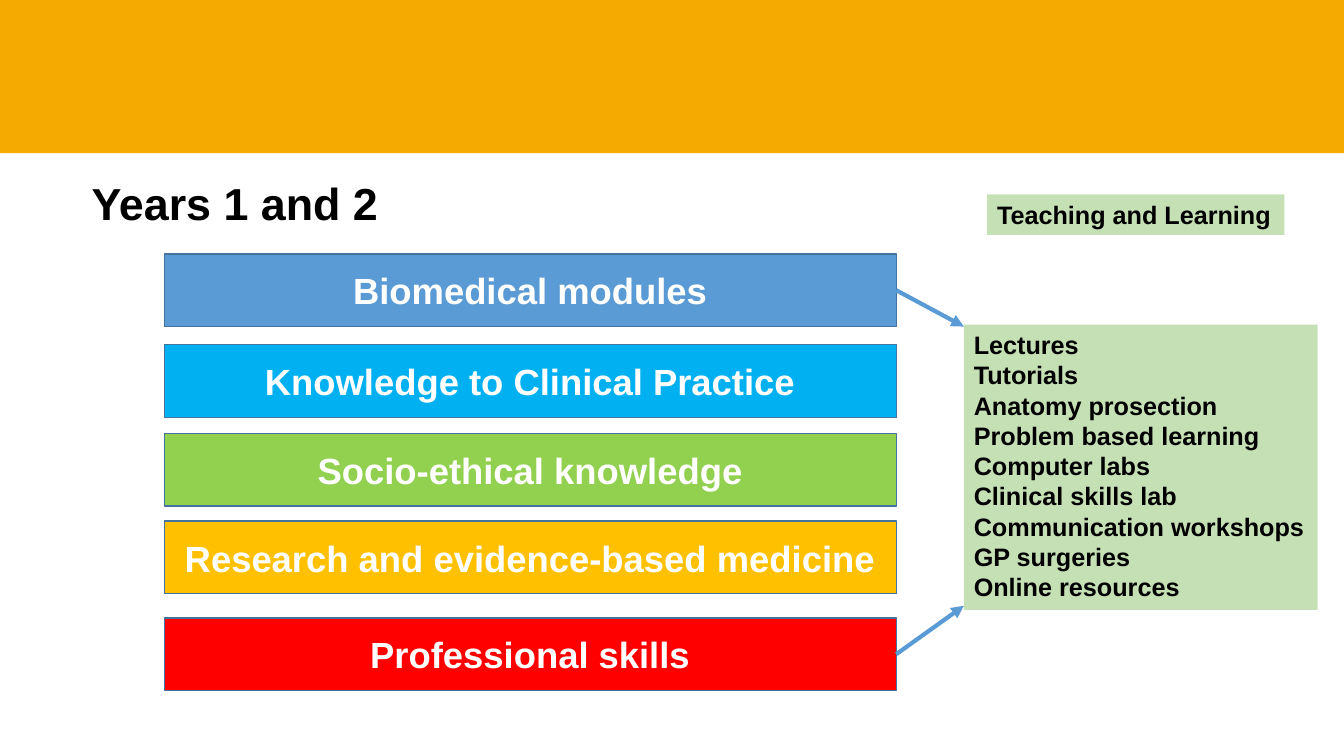
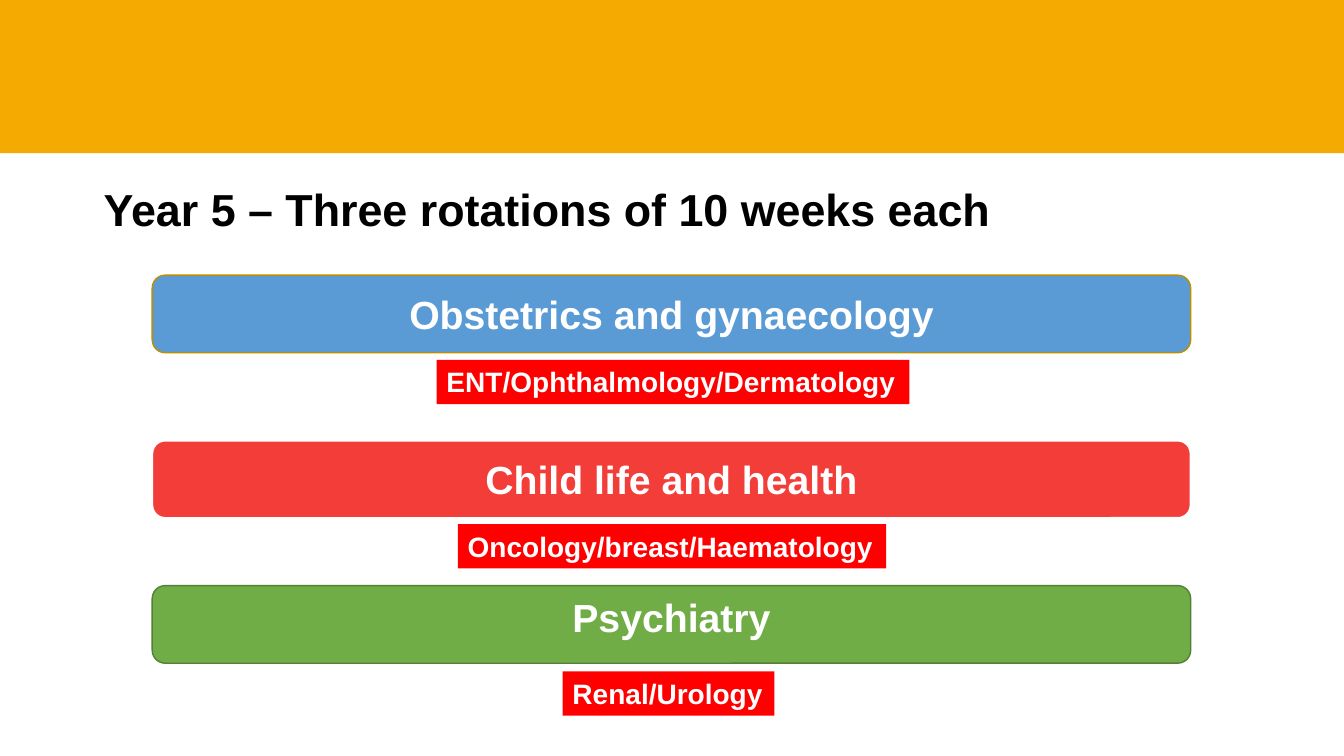
"""Build two slides on the modules and rotations of a medical degree."""
from lxml.etree import SubElement
from pptx import Presentation
from pptx.dml.color import RGBColor
from pptx.enum.shapes import MSO_CONNECTOR, MSO_SHAPE
from pptx.enum.text import MSO_ANCHOR, MSO_AUTO_SIZE, PP_ALIGN
from pptx.oxml.ns import qn
from pptx.util import Inches, Pt

FONT = "Arial"
ORANGE, BLUE, RED = "F4AA00", "5B9BD5", "FF0000"
PALE_GREEN, WHITE, BLACK = "C5E0B4", "FFFFFF", "000000"
MODULE_LINE = "43739E"

MODULES = [
    ("Biomedical modules", 2.52, BLUE),
    ("Knowledge to Clinical Practice", 3.42, "00B0F0"),
    ("Socio-ethical knowledge", 4.3, "92D050"),
    ("Research and evidence-based medicine", 5.17, "FFC000"),
    ("Professional skills", 6.13, RED),
]
TEACHING = [
    "Lectures", "Tutorials", "Anatomy prosection", "Problem based learning",
    "Computer labs", "Clinical skills lab", "Communication workshops",
    "GP surgeries", "Online resources",
]
ROTATIONS = [
    ("Obstetrics and gynaecology", 2.73, BLUE, "BD8E00", 1),
    ("Child life and health", 4.37, "F23D38", WHITE, 1.5),
    ("Psychiatry", 5.81, "70AD47", "538035", 1),
]
SPECIALTIES = [
    ("ENT/Ophthalmology/Dermatology", 4.33, 3.57, 4.69),
    ("Oncology/breast/Haematology", 4.54, 5.2, 4.25),
    ("Renal/Urology", 5.58, 6.66, 2.1),
]


def rgb(value):
    """Turn a hex string into a colour."""
    return RGBColor.from_string(value)


def fill_with(sp, color):
    """Give a shape a solid fill."""
    sp.fill.solid()
    sp.fill.fore_color.rgb = rgb(color)


def write(tf, lines, size, color, align=PP_ALIGN.LEFT):
    """Write bold lines, one paragraph each."""
    for i, line in enumerate(lines):
        p = tf.paragraphs[0] if i == 0 else tf.add_paragraph()
        p.text = line
        p.alignment = align
        p.font.name = FONT
        p.font.size = Pt(size)
        p.font.bold = True
        p.font.color.rgb = rgb(color)


def add_bar(s, kind, box, fill, line=None, width=1):
    """Add a filled shape, outlined if a line colour is given."""
    sp = s.shapes.add_shape(kind, *map(Inches, box))
    sp.shadow.inherit = False
    fill_with(sp, fill)
    if line:
        sp.line.color.rgb = rgb(line)
        sp.line.width = Pt(width)
    else:
        sp.line.fill.background()
    return sp


def add_text_bar(s, kind, box, text, size, fill, line, width=1):
    """Add a bar with white text in its middle."""
    sp = add_bar(s, kind, box, fill, line, width)
    sp.text_frame.word_wrap = True
    sp.text_frame.vertical_anchor = MSO_ANCHOR.MIDDLE
    write(sp.text_frame, [text], size, WHITE, PP_ALIGN.CENTER)
    return sp


def add_label(s, box, lines, size, color, fill=None, wrap=False):
    """Add a text box that fits its text, filled if a colour is given."""
    sp = s.shapes.add_textbox(*map(Inches, box))
    if fill:
        fill_with(sp, fill)
    sp.text_frame.word_wrap = wrap
    sp.text_frame.auto_size = MSO_AUTO_SIZE.SHAPE_TO_FIT_TEXT
    write(sp.text_frame, lines, size, color)


def add_arrow(s, source, x, y):
    """Add an arrow from the right side of a bar to a point."""
    line = s.shapes.add_connector(MSO_CONNECTOR.STRAIGHT, 0, 0, Inches(x), Inches(y))
    line.begin_connect(source, 3)
    line.line.color.rgb = rgb(BLUE)
    line.line.width = Pt(3)
    SubElement(line._element.spPr.find(qn("a:ln")), qn("a:tailEnd"), type="triangle")
    SubElement(line._element.spPr, qn("a:effectLst"))


def add_slide(prs, title, box, wrap=False):
    """Add a blank slide with the top band and a title."""
    s = prs.slides.add_slide(prs.slide_layouts[6])
    add_bar(s, MSO_SHAPE.RECTANGLE, (0, 0, 13.33, 1.52), ORANGE)
    add_label(s, box, [title], 32, BLACK, wrap=wrap)
    return s


def add_modules_slide(prs):
    """Show the modules of the first two years and how they are taught."""
    s = add_slide(prs, "Years 1 and 2", (0.81, 1.69, 3.07, 0.64))
    bars = [
        add_text_bar(s, MSO_SHAPE.RECTANGLE, (1.63, top, 7.26, 0.72),
                     text, 26, fill, MODULE_LINE)
        for text, top, fill in MODULES
    ]
    add_label(s, (9.56, 3.22, 3.51, 2.83), TEACHING, 18, BLACK, PALE_GREEN)
    add_arrow(s, bars[0], 9.56, 3.24)
    add_arrow(s, bars[-1], 9.56, 6.01)
    add_label(s, (9.79, 1.93, 2.95, 0.4), ["Teaching and Learning"], 18, BLACK, PALE_GREEN)


def add_rotations_slide(prs):
    """Show the three rotations of year 5 with their specialties."""
    s = add_slide(prs, "Year 5 – Three rotations of 10 weeks each",
                  (0.93, 1.75, 10.2, 0.64), wrap=True)
    for text, top, fill, line, width in ROTATIONS:
        sp = add_text_bar(s, MSO_SHAPE.ROUNDED_RECTANGLE, (1.51, top, 10.3, 0.77),
                          text, 28, fill, line, width)
    sp.text_frame.margin_bottom = Inches(0.2)
    for text, left, top, width in SPECIALTIES:
        add_label(s, (left, top, width, 0.44), [text], 20, WHITE, RED)


def main():
    """Build and save the presentation."""
    prs = Presentation()
    prs.slide_width, prs.slide_height = Inches(13.33), Inches(7.5)
    add_modules_slide(prs)
    add_rotations_slide(prs)
    prs.save("out.pptx")


if __name__ == "__main__":
    main()
